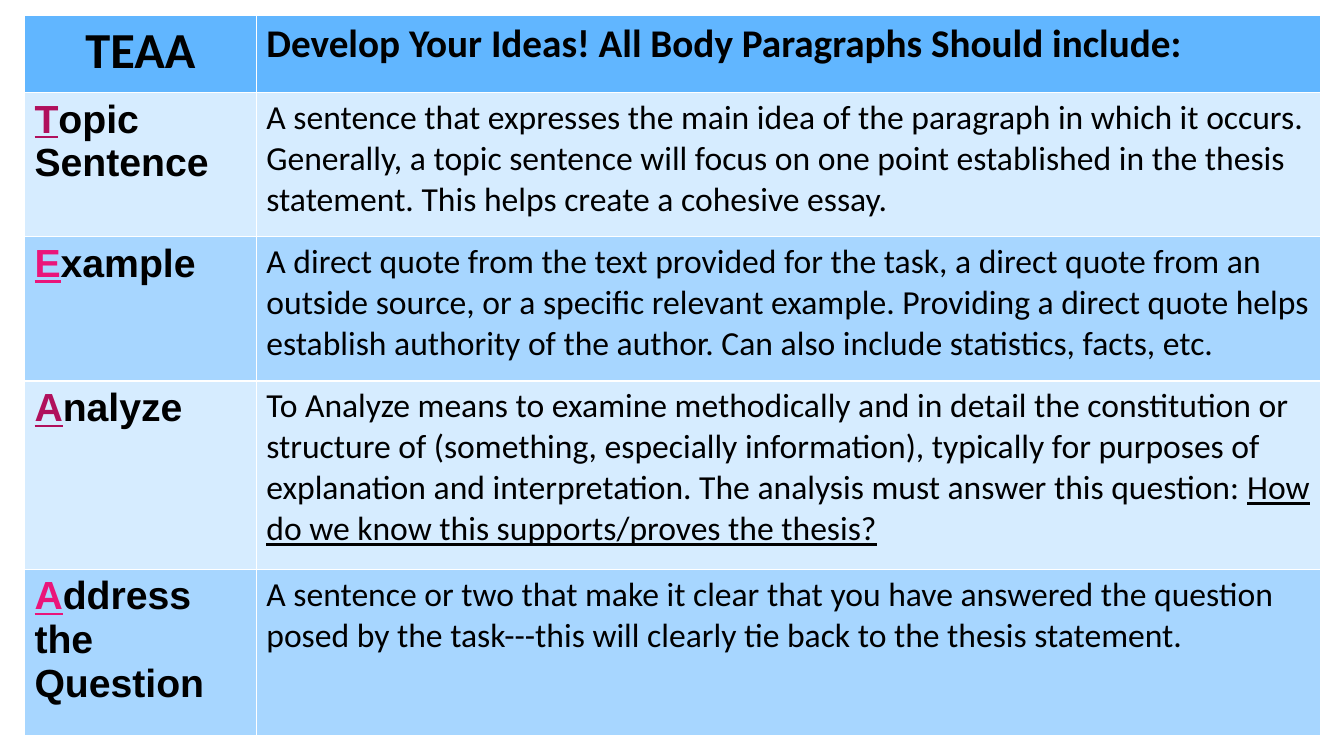
from pptx import Presentation
from pptx import util as u
from pptx.dml import color
from pptx.enum import text

HEADER_FILL = "61B6FF"
BANDS = [("D6ECFF", "B0105C"), ("A7D6FF", "EA157A")]
BLACK = "000000"
COLUMN_WIDTHS = [165.6, 760.3]
ROW_HEIGHTS = [55.4, 103, 103, 134.6, 118.8]

HEADINGS = [
    ("TEAA", 36, text.PP_ALIGN.CENTER),
    ("Develop Your Ideas! All Body Paragraphs Should include:", 28, text.PP_ALIGN.LEFT),
]
STEPS = [
    ("Topic Sentence",
     "A sentence that expresses the main idea of the paragraph in which it occurs. "
     "Generally, a topic sentence will focus on one point established in the thesis "
     "statement. This helps create a cohesive essay.", ""),
    ("Example",
     "A direct quote from the text provided for the task, a direct quote from an outside "
     "source, or a specific relevant example. Providing a direct quote helps establish "
     "authority of the author. Can also include statistics, facts, etc.", ""),
    ("Analyze",
     "To Analyze means to examine methodically and in detail the constitution or structure "
     "of (something, especially information), typically for purposes of explanation and "
     "interpretation. The analysis must answer this question: ",
     "How do we know this supports/proves the thesis?"),
    ("Address the Question",
     "A sentence or two that make it clear that you have answered the question posed by "
     "the task---this will clearly tie back to the thesis statement.", ""),
]


def paint(target, hex_color):
    target.rgb = color.RGBColor.from_string(hex_color)


def fill_cell(cell, hex_color):
    cell.fill.solid()
    paint(cell.fill.fore_color, hex_color)


def add_run(cell, words, size, font="Calibri", hex_color=BLACK, bold=False, underline=False):
    run = cell.text_frame.paragraphs[0].add_run()
    run.text = words
    run.font.name = font
    run.font.size = u.Pt(size)
    run.font.bold = bold
    run.font.underline = underline
    paint(run.font.color, hex_color)


def add_teaa_table(slide, left, top, widths, heights):
    teaa = slide.shapes.add_table(
        len(heights), len(widths), u.Pt(left), u.Pt(top),
        u.Pt(sum(widths)), u.Pt(sum(heights))).table
    for column, width in zip(teaa.columns, widths):
        column.width = u.Pt(width)
    for row, height in zip(teaa.rows, heights):
        row.height = u.Pt(height)

    for column, (heading, size, alignment) in enumerate(HEADINGS):
        cell = teaa.cell(0, column)
        fill_cell(cell, HEADER_FILL)
        cell.text_frame.paragraphs[0].alignment = alignment
        add_run(cell, heading, size, bold=True)

    for row, (step, explanation, question) in enumerate(STEPS, start=1):
        band_fill, initial_color = BANDS[(row - 1) % len(BANDS)]
        step_cell, explanation_cell = teaa.cell(row, 0), teaa.cell(row, 1)
        fill_cell(step_cell, band_fill)
        fill_cell(explanation_cell, band_fill)
        add_run(step_cell, step[0], 28, "Arial", initial_color, bold=True, underline=True)
        add_run(step_cell, step[1:], 28, "Arial", bold=True)
        add_run(explanation_cell, explanation, 24)
        if question:
            add_run(explanation_cell, question, 24, underline=True)


def main():
    deck = Presentation()
    deck.slide_width, deck.slide_height = u.Pt(960), u.Pt(540)
    slide = deck.slides.add_slide(deck.slide_layouts[6])
    add_teaa_table(slide, 17.5, 10.8, COLUMN_WIDTHS, ROW_HEIGHTS)
    deck.save("out.pptx")


if __name__ == "__main__":
    main()
